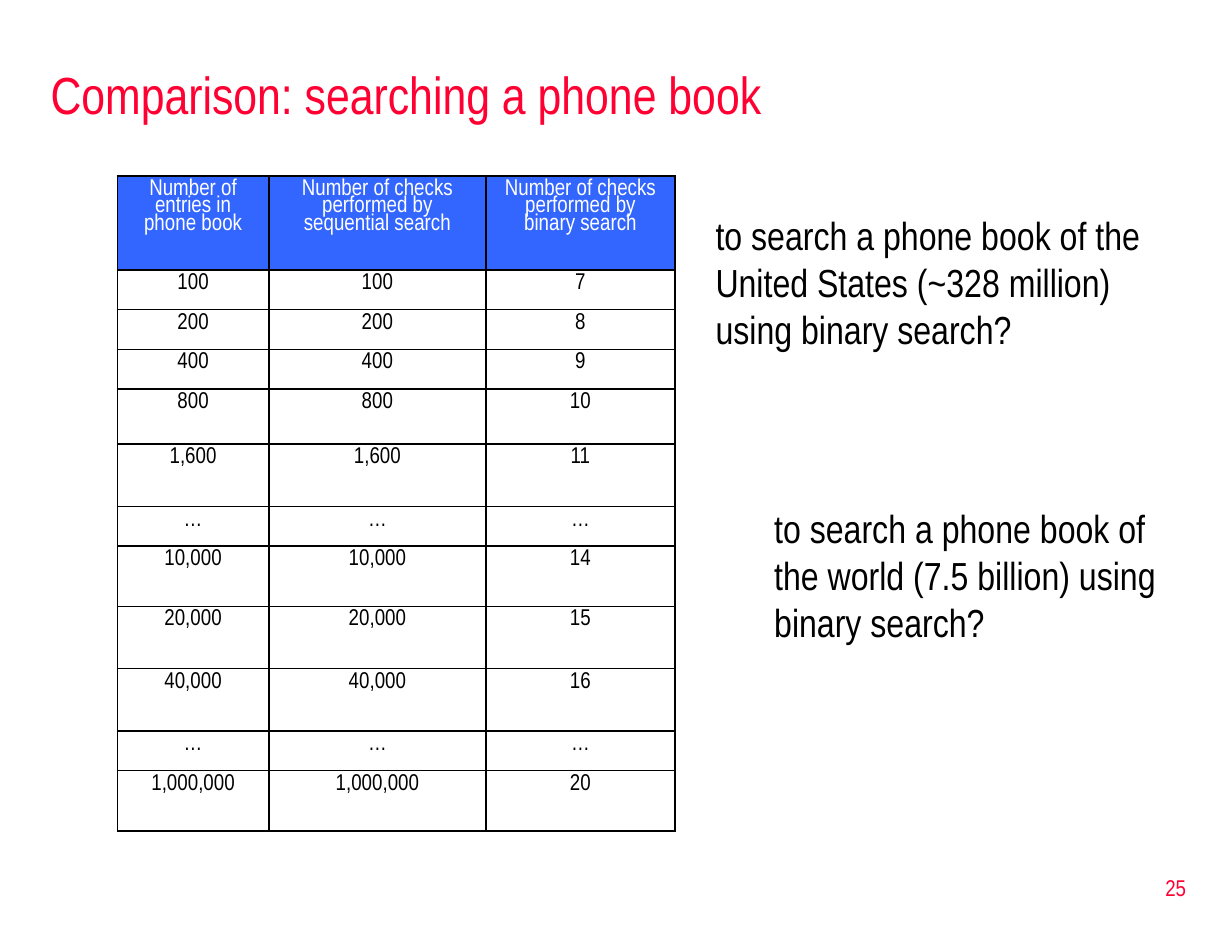
from dataclasses import dataclass

from lxml import etree
from pptx import Presentation
from pptx.dml.color import RGBColor
from pptx.enum.text import MSO_ANCHOR, MSO_AUTO_SIZE, PP_ALIGN
from pptx.oxml.ns import qn
from pptx.util import Cm, Pt

LEFT, CENTER, RIGHT = PP_ALIGN.LEFT, PP_ALIGN.CENTER, PP_ALIGN.RIGHT
TOP, MIDDLE = MSO_ANCHOR.TOP, MSO_ANCHOR.MIDDLE
NO_AUTOFIT = MSO_AUTO_SIZE.NONE
TITLE_ONLY = 5


@dataclass(frozen=True)
class Theme:
    font: str = "Arial Narrow"
    accent: str = "FF0033"
    header_fill: str = "3366FF"
    header_text: str = "FFFFFF"
    ink: str = "000000"
    title_size: int = 32
    body_size: int = 24
    small_size: int = 14
    border_width: int = 1


THEME = Theme()

HEADINGS = (
    "Number of entries in phone book",
    "Number of checks performed by sequential search",
    "Number of checks performed by binary search",
)
# Entries, binary search checks, row height in cm. Sequential search checks every entry.
SEARCHES = (
    ("100", "7", 0.86),
    ("200", "8", 0.86),
    ("400", "9", 0.86),
    ("800", "10", 1.19),
    ("1,600", "11", 1.35),
    ("…", "…", 0.86),
    ("10,000", "14", 1.3),
    ("20,000", "15", 1.35),
    ("40,000", "16", 1.35),
    ("…", "…", 0.86),
    ("1,000,000", "20", 1.3),
)
HEADER_HEIGHT = 2.03
COLUMN_WIDTHS = (3.28, 4.7, 4.09)
QUESTIONS = (
    "to search a phone book of the United States (~328 million) using binary search?",
    "to search a phone book of the world (7.5 billion) using binary search?",
)


def set_attributes(target, values):
    for name, value in values.items():
        setattr(target, name, value)


def write_paragraph(paragraph, text, size, color, **paragraph_format):
    paragraph.text = text
    set_attributes(paragraph, paragraph_format)
    set_attributes(paragraph.font, {"name": THEME.font, "size": Pt(size), "bold": False})
    paragraph.font.color.rgb = RGBColor.from_string(color)


def place_title(slide, text):
    title = slide.shapes.title
    set_attributes(title, {"left": Cm(0.84), "top": Cm(1.07),
                           "width": Cm(25.2), "height": Cm(1.9)})
    set_attributes(title.text_frame, {"vertical_anchor": MIDDLE, "auto_size": NO_AUTOFIT})
    write_paragraph(title.text_frame.paragraphs[0], text, THEME.title_size, THEME.accent,
                    alignment=LEFT)


def add_text_frame(slide, left, top, width, height, **frame_format):
    box = slide.shapes.add_textbox(Cm(left), Cm(top), Cm(width), Cm(height))
    set_attributes(box.text_frame, frame_format)
    return box.text_frame


def add_borders(cell):
    """Draw all four sides; they must come before the fill in the cell properties."""
    properties = cell._tc.get_or_add_tcPr()
    for position, side in enumerate(("lnL", "lnR", "lnT", "lnB")):
        line = etree.Element(qn(f"a:{side}"), w=str(Pt(THEME.border_width)))
        fill = etree.SubElement(line, qn("a:solidFill"))
        etree.SubElement(fill, qn("a:srgbClr"), val=THEME.ink)
        properties.insert(position, line)


def format_cell(cell, text, is_header):
    if is_header:
        cell.fill.solid()
        cell.fill.fore_color.rgb = RGBColor.from_string(THEME.header_fill)
    else:
        cell.fill.background()
    color = THEME.header_text if is_header else THEME.ink
    write_paragraph(cell.text_frame.paragraphs[0], text, THEME.small_size, color,
                    alignment=CENTER, line_spacing=0.8)
    add_borders(cell)


def add_search_table(slide):
    rows = [HEADINGS] + [(entries, entries, checks) for entries, checks, _ in SEARCHES]
    heights = [HEADER_HEIGHT] + [height for _, _, height in SEARCHES]
    table = slide.shapes.add_table(
        len(rows), len(HEADINGS), Cm(2.54), Cm(3.81),
        Cm(sum(COLUMN_WIDTHS)), Cm(sum(heights))).table
    set_attributes(table, {"first_row": False, "horz_banding": False})
    for column, width in zip(table.columns, COLUMN_WIDTHS):
        column.width = Cm(width)
    for index, (row, height, texts) in enumerate(zip(table.rows, heights, rows)):
        row.height = Cm(height)
        for cell, text in zip(row.cells, texts):
            format_cell(cell, text, is_header=index == 0)


def add_questions(slide):
    frame = add_text_frame(slide, 15.24, 4.45, 10.59, 11.53,
                           word_wrap=True, vertical_anchor=TOP)
    first, second = frame.paragraphs[0], frame.add_paragraph()
    write_paragraph(first, QUESTIONS[0], THEME.body_size, THEME.ink)
    write_paragraph(second, QUESTIONS[1], THEME.body_size, THEME.ink, space_before=Pt(93.5))
    second._p.get_or_add_pPr().set("marL", str(Cm(1.27)))


def add_page_number(slide, number):
    frame = add_text_frame(slide, 20.37, 18.52, 5.56, 1.35,
                           word_wrap=False, vertical_anchor=MIDDLE)
    write_paragraph(frame.paragraphs[0], number, THEME.small_size, THEME.accent,
                    alignment=RIGHT)


def main():
    presentation = Presentation()
    set_attributes(presentation, {"slide_width": Cm(26.67), "slide_height": Cm(20.32)})
    slide = presentation.slides.add_slide(presentation.slide_layouts[TITLE_ONLY])
    place_title(slide, "Comparison: searching a phone book")
    add_search_table(slide)
    add_questions(slide)
    add_page_number(slide, "25")
    presentation.save("out.pptx")


if __name__ == "__main__":
    main()
